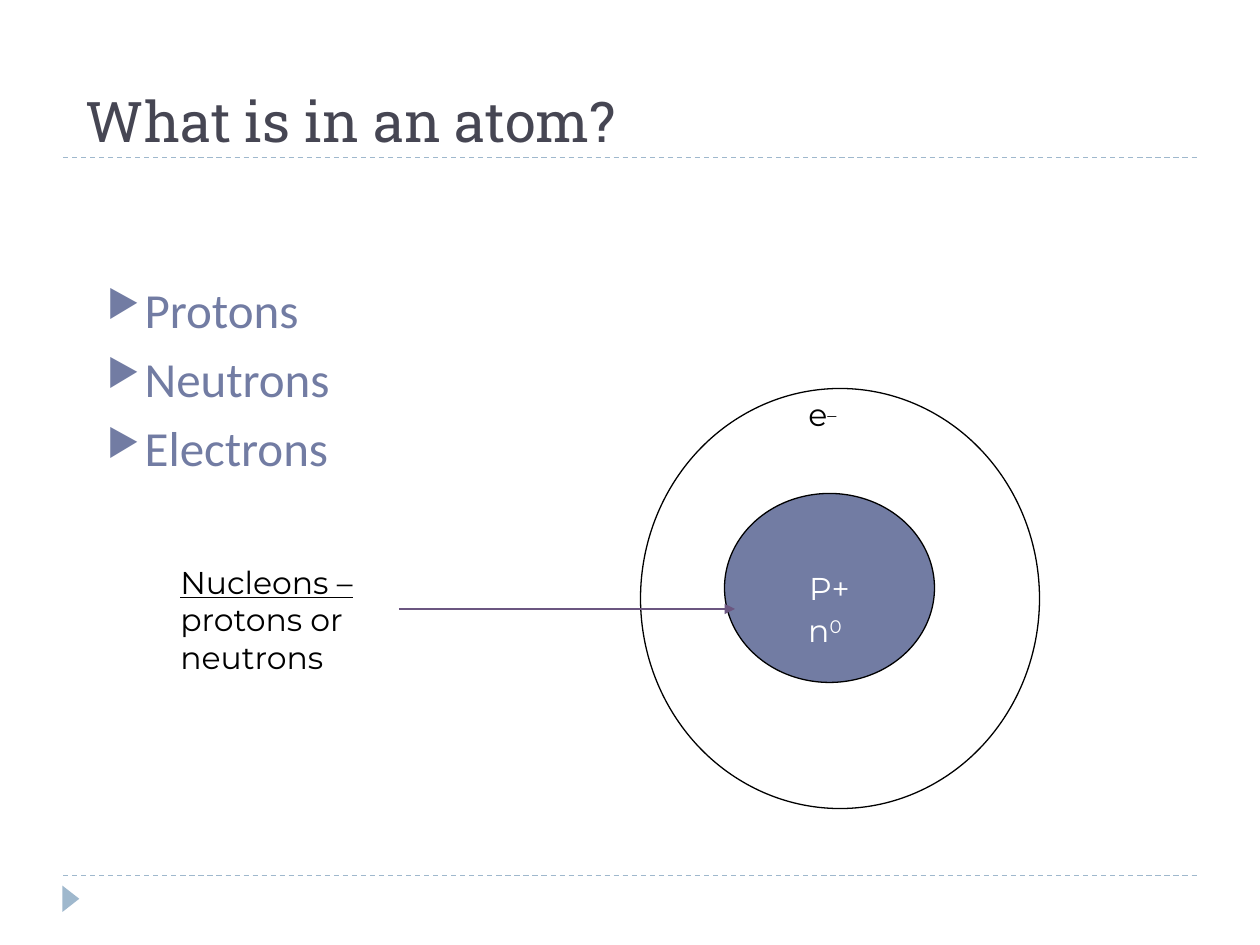
import pptx
import pptx.dml.color
import pptx.enum.dml
import pptx.enum.shapes
import pptx.enum.text
import pptx.oxml
import pptx.oxml.ns
import pptx.util

# The slide is a grid of 120 columns by 90 rows, twelve cells to the inch
CELL = 1 / 12
SLATE, PALE, INK, PLUM = "727CA3", "9FB8CD", "464653", "6B5680"
BLACK, WHITE = "000000", "FFFFFF"
LABEL_FONT = "Montserrat"
SHAPE = pptx.enum.shapes.MSO_SHAPE
ANCHOR = pptx.enum.text.MSO_ANCHOR


def grid(*cells):
    return [pptx.util.Inches(cell * CELL) for cell in cells]


def color(code):
    return pptx.dml.color.RGBColor.from_string(code)


def add_xml(parent, tag, **attributes):
    element = pptx.oxml.parse_xml(f"<a:{tag} {pptx.oxml.ns.nsdecls('a')}/>")
    for name, value in attributes.items():
        element.set(name, value)
    parent.append(element)
    return element


def style(paragraph, name, size, code):
    paragraph.font.name = name
    paragraph.font.size = pptx.util.Pt(size)
    paragraph.font.color.rgb = color(code)


def add_text(page, place, spans, name=LABEL_FONT, size=18, code=BLACK,
             anchor=ANCHOR.TOP, wrap=True):
    """Add a one-paragraph text box and return its spans."""
    frame = page.shapes.add_textbox(*grid(*place)).text_frame
    frame.word_wrap = wrap
    frame.vertical_anchor = anchor
    para = frame.paragraphs[0]
    style(para, name, size, code)
    runs = []
    for text in spans:
        span = para.add_run()
        span.text = text
        runs.append(span)
    return runs


def add_particle(page, place, letter, charge, code, wrap=True):
    """Add a particle's letter with its raised charge."""
    raised = add_text(page, place, [letter, charge], code=code, wrap=wrap)[1]
    raised.font._element.set("baseline", "30000")


def add_bullets(page, place, items):
    frame = page.shapes.add_textbox(*grid(*place)).text_frame
    frame.word_wrap = True
    for index, item in enumerate(items):
        para = frame.add_paragraph() if index else frame.paragraphs[0]
        para.text = item
        para.space_before = pptx.util.Pt(6)
        style(para, "Calibri", 28, SLATE)
        properties = para._p.get_or_add_pPr()
        indent = pptx.util.Inches(0.3)
        properties.set("marL", str(indent))
        properties.set("indent", str(-indent))
        # Bullet parts belong before the default run properties
        defaults = properties.find(pptx.oxml.ns.qn("a:defRPr"))
        add_xml(add_xml(properties, "buClr"), "srgbClr", val=SLATE)
        add_xml(properties, "buSzPct", val="76000")
        add_xml(properties, "buChar", char="▶")
        properties.append(defaults)


def add_figure(page, kind, place, fill=None, line=None):
    figure = page.shapes.add_shape(kind, *grid(*place))
    figure.shadow.inherit = False
    if fill:
        figure.fill.solid()
        figure.fill.fore_color.rgb = color(fill)
    else:
        figure.fill.background()
    if line:
        figure.line.color.rgb = color(line)
        figure.line.width = pptx.util.Pt(0.75)
    else:
        figure.line.fill.background()
    return figure


def add_line(page, left, right, row, code, dashed=False, arrow=False):
    connector = page.shapes.add_connector(
        pptx.enum.shapes.MSO_CONNECTOR.STRAIGHT, *grid(left, row, right, row))
    connector.line.color.rgb = color(code)
    connector.line.width = pptx.util.Pt(0.75)
    if dashed:
        connector.line.dash_style = pptx.enum.dml.MSO_LINE.DASH
    if arrow:
        add_xml(connector.line._get_or_add_ln(), "tailEnd", type="triangle")
    add_xml(connector._element.spPr, "effectLst")


def main():
    deck = pptx.Presentation()
    deck.slide_width, deck.slide_height = grid(120, 90)
    page = deck.slides.add_slide(deck.slide_layouts[6])

    # Page frame: two dashed rules and a corner marker
    for row in (83.4, 15):
        add_line(page, 6, 114, row, PALE, dashed=True)
    marker = add_figure(page, SHAPE.ISOSCELES_TRIANGLE, (5.5, 84.8, 2.5, 1.6), PALE)
    marker.rotation = 90

    # Title and list
    add_text(page, (7, -4, 102, 19.2), ["What is in an atom?"],
             "Roboto Slab", 32, INK, ANCHOR.BOTTOM)
    add_bullets(page, (9, 26, 50, 54), ["Protons", "Neutrons", "Electrons"])

    # Atom: nucleus, then electron shell
    nucleus = add_figure(page, SHAPE.OVAL, (69, 47, 20, 18), SLATE, BLACK)
    nucleus.text_frame.text = "P+"
    nucleus.text_frame.word_wrap = False
    nucleus.text_frame.vertical_anchor = ANCHOR.MIDDLE
    para = nucleus.text_frame.paragraphs[0]
    para.alignment = pptx.enum.text.PP_ALIGN.CENTER
    style(para, LABEL_FONT, 18, WHITE)
    add_particle(page, (75.8, 57.6, 5.8, 4.8), "n", "0", WHITE, wrap=False)
    add_figure(page, SHAPE.OVAL, (61, 37, 38, 40), line=BLACK)
    add_particle(page, (75.8, 37, 11.2, 4.8), "e", "_", BLACK)

    # Nucleon note and its arrow
    add_line(page, 38, 70, 58, PLUM, arrow=True)
    term = add_text(page, (16, 53, 23, 12),
                    ["Nucleons –", " protons or neutrons"])[0]
    term.font.underline = True

    deck.save("out.pptx")


if __name__ == "__main__":
    main()
